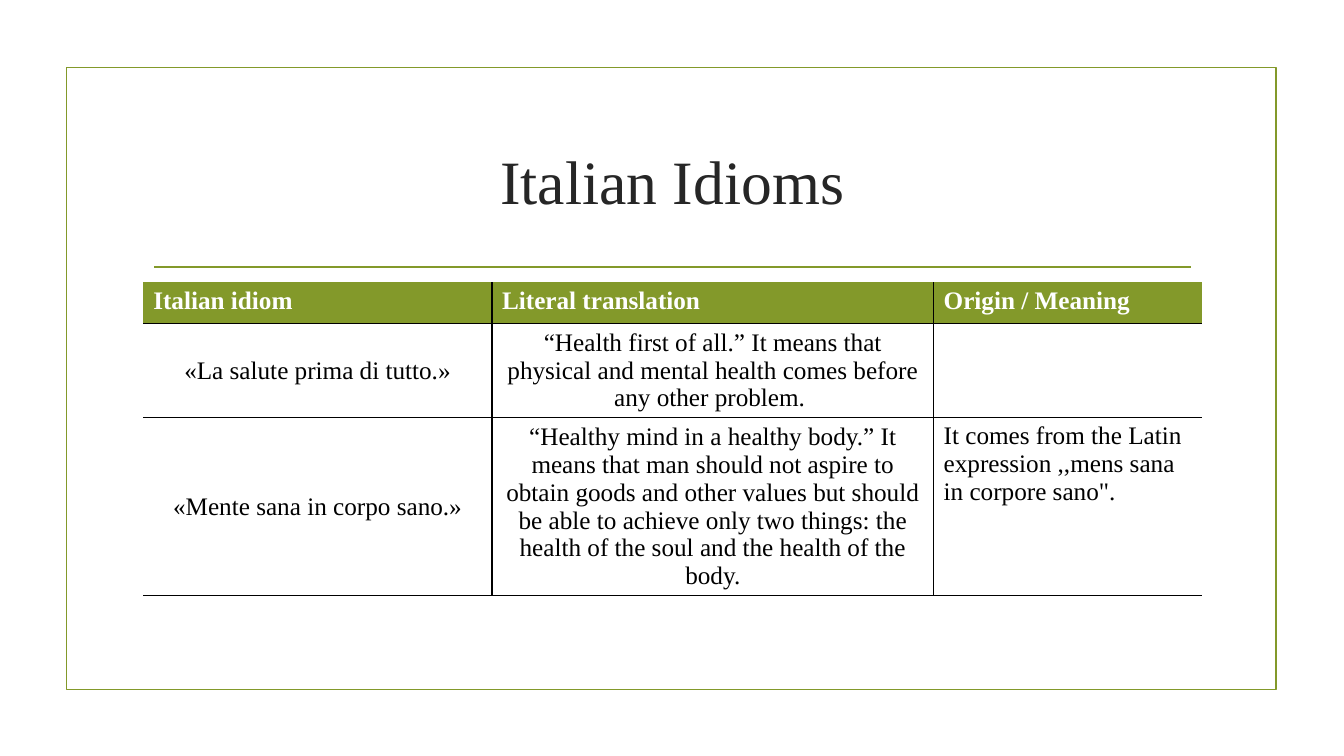
from dataclasses import dataclass

from lxml.etree import SubElement
from pptx import Presentation
from pptx.dml.color import RGBColor
from pptx.enum.shapes import MSO_CONNECTOR, MSO_SHAPE
from pptx.enum.text import MSO_ANCHOR, PP_ALIGN
from pptx.oxml.ns import qn
from pptx.table import _Cell
from pptx.text.text import _Paragraph
from pptx.util import Inches, Pt

GREEN = RGBColor(0x83, 0x99, 0x2A)
DARK = RGBColor(0x26, 0x26, 0x26)
BLACK = RGBColor(0, 0, 0)
WHITE = RGBColor(255, 255, 255)
FONT = "Times New Roman"
WIDTHS = (3.46, 4.38, 2.66)
HEADS = ("Italian idiom", "Literal translation", "Origin / Meaning")


@dataclass
class Idiom:
    phrase: str
    meaning: str
    origin: str
    height: float


IDIOMS = (
    Idiom("«La salute prima di tutto.»",
          "“Health first of all.” It means that physical and mental health "
          "comes before any other problem. ",
          "", 0.93),
    Idiom("«Mente sana in corpo sano.»",
          "“Healthy mind in a healthy body.” It means that man should not "
          "aspire to obtain goods and other values but should be able to "
          "achieve only two things: the health of the soul and the health "
          "of the body.",
          "It comes from the Latin expression ,,mens sana in corpore sano\".",
          1.77),
)


def style(para: _Paragraph, size: float, color: RGBColor, bold: bool = False) -> None:
    font = para.font
    font.name, font.size, font.bold = FONT, Pt(size), bold
    font.color.rgb = color


def add_edges(cell: _Cell, shown: str) -> None:
    """Draw black borders on the sides in shown (L, R, T, B) and clear the rest."""
    props = cell._tc.get_or_add_tcPr()
    for side in "LRTB":
        line = SubElement(props, qn(f"a:ln{side}"), w=str(Pt(1)))
        if side in shown:
            fill = SubElement(line, qn("a:solidFill"))
            SubElement(fill, qn("a:srgbClr"), val=str(BLACK))
        else:
            SubElement(line, qn("a:noFill"))


def fill_cell(cell: _Cell, text: str, row: int, col: int) -> None:
    head = row == 0
    last = len(WIDTHS) - 1
    add_edges(cell, "B" + "T" * (not head) + "L" * (col > 0) + "R" * (col < last))
    if head:
        cell.fill.solid()
        cell.fill.fore_color.rgb = GREEN
    else:
        cell.fill.background()
    cell.text = text
    para = cell.text_frame.paragraphs[0]
    style(para, 18, WHITE if head else BLACK, head)
    if not head and col < last:
        cell.vertical_anchor = MSO_ANCHOR.MIDDLE
        para.alignment = PP_ALIGN.CENTER


def main() -> None:
    deck = Presentation()
    deck.slide_width, deck.slide_height = Inches(13.33), Inches(7.5)
    slide = deck.slides.add_slide(deck.slide_layouts[5])
    shapes = slide.shapes

    title = shapes.title
    title.left, title.top = Inches(1.42), Inches(1.07)
    title.width, title.height = Inches(10.5), Inches(1.43)
    title.text = "Italian Idioms"
    title.text_frame.vertical_anchor = MSO_ANCHOR.MIDDLE
    para = title.text_frame.paragraphs[0]
    para.alignment = PP_ALIGN.CENTER
    style(para, 44, DARK)

    frame = shapes.add_shape(MSO_SHAPE.RECTANGLE, Inches(0.66), Inches(0.67),
                             Inches(12), Inches(6.17))
    frame.shadow.inherit = False
    frame.fill.background()
    rule = shapes.add_connector(MSO_CONNECTOR.STRAIGHT, Inches(1.53), Inches(2.65),
                                Inches(11.81), Inches(2.65))
    SubElement(rule._element.spPr, qn("a:effectLst"))
    for item in (frame, rule):
        item.line.color.rgb = GREEN
        item.line.width = Pt(1.25)

    rows = [HEADS] + [(i.phrase, i.meaning, i.origin) for i in IDIOMS]
    heights = [0.41] + [i.height for i in IDIOMS]
    table = shapes.add_table(len(rows), len(WIDTHS), Inches(1.42), Inches(2.8),
                             Inches(sum(WIDTHS)), Inches(sum(heights))).table
    table.horz_banding = False
    for col, width in zip(table.columns, WIDTHS):
        col.width = Inches(width)
    for row, height in zip(table.rows, heights):
        row.height = Inches(height)
    for r, texts in enumerate(rows):
        for c, text in enumerate(texts):
            fill_cell(table.cell(r, c), text, r, c)

    deck.save("out.pptx")


if __name__ == "__main__":
    main()
